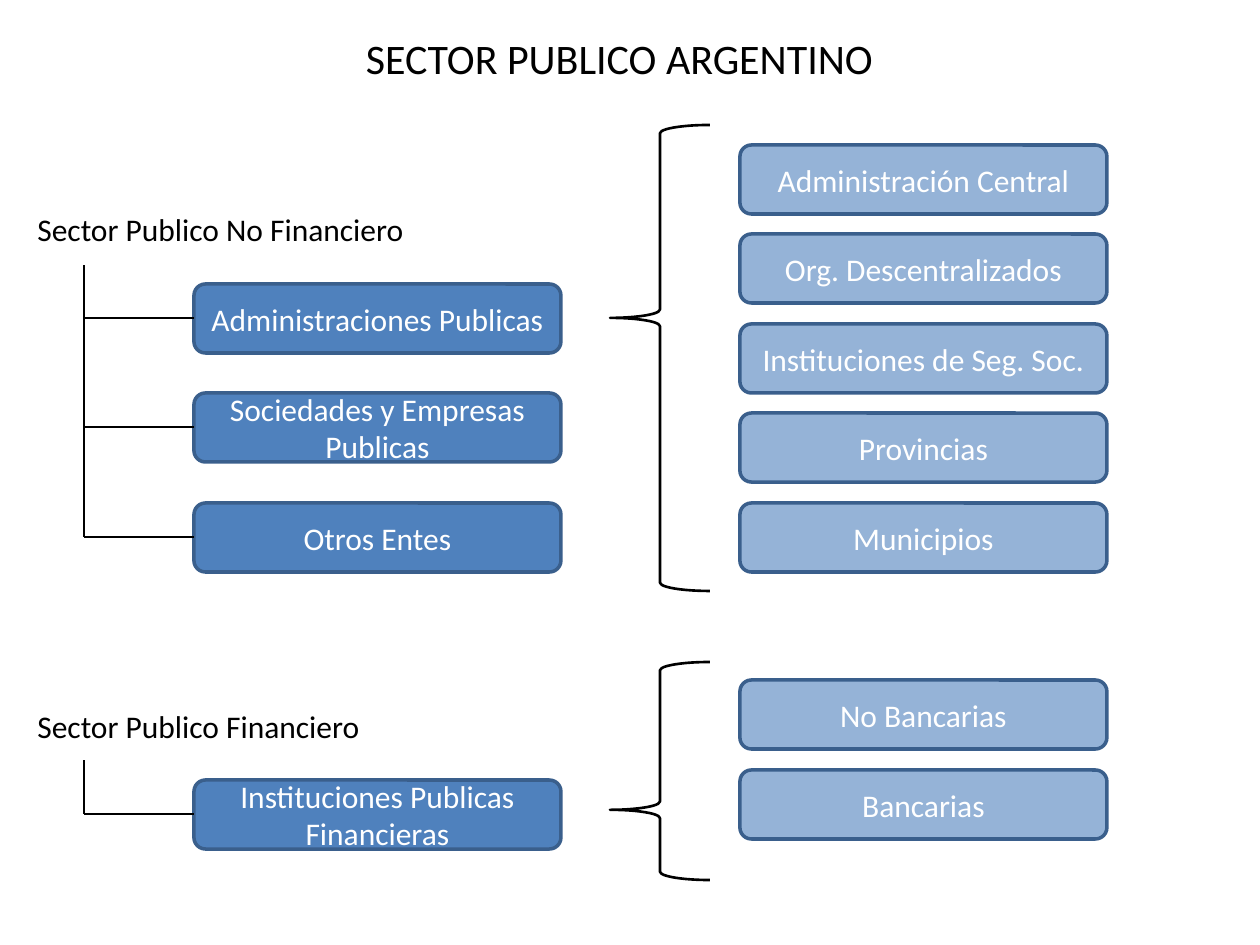
from dataclasses import dataclass

from lxml import etree
from pptx import Presentation
from pptx import util as u
from pptx.dml import color
from pptx.enum import shapes, text
from pptx.oxml import ns

PX_PER_INCH = 126


@dataclass(frozen=True)
class Theme:
    font: str = "Calibri"
    title_pt: int = 24
    body_pt: int = 18
    ink: str = "000000"
    box_text: str = "FFFFFF"
    group_fill: str = "4F81BD"
    member_fill: str = "95B3D7"
    box_line: str = "3A5F8C"
    box_line_pt: float = 2
    line_pt: float = 1.5


@dataclass(frozen=True)
class Column:
    """Boxes spread evenly from the first top to the last top."""
    names: tuple[str, ...]
    first: int
    last: int

    def tops(self) -> list[int]:
        gaps = max(1, len(self.names) - 1)
        return [self.first + (self.last - self.first) * i // gaps
                for i in range(len(self.names))]


@dataclass(frozen=True)
class Sector:
    label: str
    label_top: int
    trunk_top: int
    groups: Column
    members: Column
    brace_top: int
    brace_height: int
    brace_point: float


THEME = Theme()

# Shared horizontal positions and sizes, in px
LABEL_X, LABEL_W, LABEL_H = 25, 427, 50
TRUNK_X, GROUP_X, MEMBER_X = 84, 194, 740
BOX_W, BOX_H = 367, 69
BRACE_X, BRACE_W, BRACE_CURVE = 610, 100, 0.083

SECTORS = (
    Sector("Sector Publico No Financiero", 204, 265,
           Column(("Administraciones Publicas", "Sociedades y Empresas Publicas",
                   "Otros Entes"), 284, 503),
           Column(("Administración Central", "Org. Descentralizados",
                   "Instituciones de Seg. Soc.", "Provincias", "Municipios"), 145, 503),
           125, 466, 0.414),
    Sector("Sector Publico Financiero", 701, 760,
           Column(("Instituciones Publicas Financieras",), 780, 780),
           Column(("No Bancarias", "Bancarias"), 680, 770),
           662, 218, 0.678),
)


def px(length: int) -> int:
    return round(length * u.Inches(1) / PX_PER_INCH)


def rgb(value: str) -> color.RGBColor:
    return color.RGBColor.from_string(value)


def write(frame, words: str, size: int, ink: str, align) -> None:
    frame.word_wrap = True
    paragraph = frame.paragraphs[0]
    paragraph.alignment = align
    run = paragraph.add_run()
    run.text = words
    for name, value in {"name": THEME.font, "size": u.Pt(size)}.items():
        setattr(run.font, name, value)
    run.font.color.rgb = rgb(ink)


def stroke(line, ink: str, width: float) -> None:
    line.color.rgb = rgb(ink)
    line.width = u.Pt(width)


def add_label(slide, words: str, area: tuple[int, int, int, int], size: int, align) -> None:
    label = slide.shapes.add_textbox(*map(px, area))
    write(label.text_frame, words, size, THEME.ink, align)


def add_column(slide, column: Column, left: int, fill: str) -> None:
    for name, top in zip(column.names, column.tops()):
        box = slide.shapes.add_shape(shapes.MSO_SHAPE.ROUNDED_RECTANGLE,
                                     *map(px, (left, top, BOX_W, BOX_H)))
        box.shadow.inherit = False
        box.fill.solid()
        box.fill.fore_color.rgb = rgb(fill)
        stroke(box.line, THEME.box_line, THEME.box_line_pt)
        box.text_frame.vertical_anchor = text.MSO_ANCHOR.MIDDLE
        write(box.text_frame, name, THEME.body_pt, THEME.box_text, text.PP_ALIGN.CENTER)


def add_line(slide, x1: int, y1: int, x2: int, y2: int) -> None:
    line = slide.shapes.add_connector(shapes.MSO_CONNECTOR.STRAIGHT,
                                      *map(px, (x1, y1, x2, y2)))
    stroke(line.line, THEME.ink, THEME.line_pt)
    etree.SubElement(line._element.spPr, ns.qn("a:effectLst"))


def add_tree(slide, sector: Sector) -> None:
    middles = [top + BOX_H // 2 for top in sector.groups.tops()]
    add_line(slide, TRUNK_X, middles[-1], TRUNK_X, sector.trunk_top)
    for middle in middles:
        add_line(slide, GROUP_X, middle, TRUNK_X, middle)


def add_brace(slide, sector: Sector) -> None:
    brace = slide.shapes.add_shape(
        shapes.MSO_SHAPE.LEFT_BRACE,
        *map(px, (BRACE_X, sector.brace_top, BRACE_W, sector.brace_height)))
    brace.adjustments[0] = BRACE_CURVE
    brace.adjustments[1] = sector.brace_point
    brace.shadow.inherit = False
    brace.fill.background()
    stroke(brace.line, THEME.ink, THEME.line_pt)


def main() -> None:
    deck = Presentation()
    deck.slide_width, deck.slide_height = px(1260), px(945)
    slide = deck.slides.add_slide(deck.slide_layouts[6])

    # Title
    add_label(slide, "SECTOR PUBLICO ARGENTINO", (84, 26, 1071, 63),
              THEME.title_pt, text.PP_ALIGN.CENTER)

    # Each sector: label, tree of groups, brace and members
    for sector in SECTORS:
        add_label(slide, sector.label, (LABEL_X, sector.label_top, LABEL_W, LABEL_H),
                  THEME.body_pt, text.PP_ALIGN.LEFT)
        add_column(slide, sector.groups, GROUP_X, THEME.group_fill)
        add_column(slide, sector.members, MEMBER_X, THEME.member_fill)
        add_tree(slide, sector)
        add_brace(slide, sector)

    deck.save("out.pptx")


if __name__ == "__main__":
    main()
